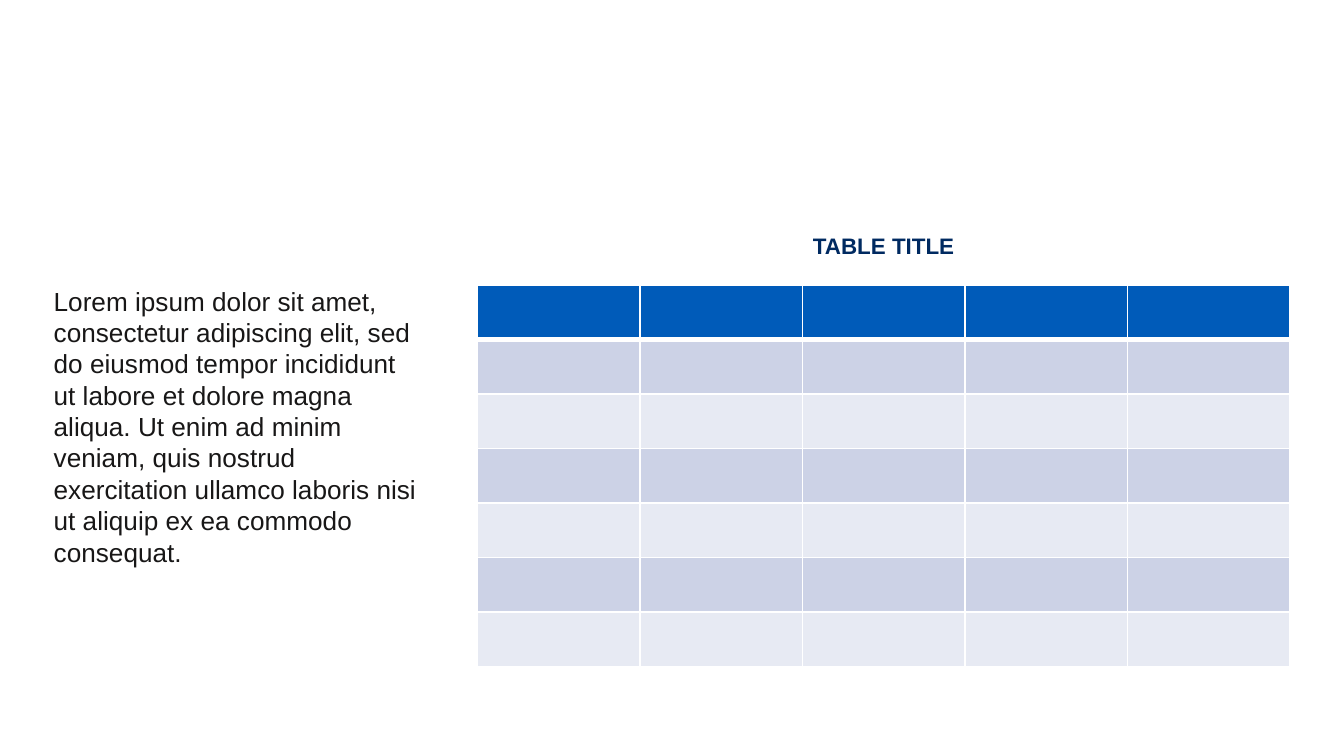
"""Build a slide with a paragraph beside a titled, empty table."""
from lxml import etree
from pptx import Presentation
from pptx.dml.color import RGBColor
from pptx.enum.text import PP_ALIGN
from pptx.oxml.ns import qn
from pptx.util import Inches, Pt

LEFT = PP_ALIGN.LEFT
CENTER = PP_ALIGN.CENTER

WHITE = "FFFFFF"
HEADER_BLUE = "005BB9"
TITLE_BLUE = "002A61"
BODY_BLACK = "181717"
BANDS = ("CCD2E6", "E7EAF3")

SLIDE_WIDTH = 10
SLIDE_HEIGHT = SLIDE_WIDTH * 9 / 16
TABLE_LEFT, TABLE_TOP = 3.55, 2.12
TABLE_WIDTH, TABLE_HEIGHT = 6.05, 2.84
ROWS, COLUMNS = 7, 5

BODY = (
    "Lorem ipsum dolor sit amet, consectetur adipiscing elit, sed do eiusmod "
    "tempor incididunt ut labore et dolore magna aliqua. Ut enim ad minim "
    "veniam, quis nostrud exercitation ullamco laboris nisi ut aliquip ex ea "
    "commodo consequat."
)


def color(value):
    return RGBColor.from_string(value)


class SlideBuilder:
    def __init__(self, slide, font_name="Arial"):
        self.slide = slide
        self.font_name = font_name

    def background(self, fill):
        background_fill = self.slide.background.fill
        background_fill.solid()
        background_fill.fore_color.rgb = color(fill)

    def text(self, box, text, size, text_color, bold=False, align=LEFT, line_spacing=None):
        shape = self.slide.shapes.add_textbox(*(Inches(length) for length in box))
        frame = shape.text_frame
        frame.word_wrap = True
        frame.margin_left = frame.margin_right = 0
        frame.margin_top = frame.margin_bottom = 0
        paragraph = frame.paragraphs[0]
        paragraph.text = text
        paragraph.alignment = align
        paragraph.line_spacing = line_spacing
        font = paragraph.font
        font.name = self.font_name
        font.size = Pt(size)
        font.bold = bold
        font.color.rgb = color(text_color)

    def border(self, cell, side, width):
        properties = cell._tc.get_or_add_tcPr()
        line = etree.SubElement(properties, qn(f"a:ln{side}"), w=str(Pt(width)))
        fill = etree.SubElement(line, qn("a:solidFill"))
        etree.SubElement(fill, qn("a:srgbClr"), val=WHITE)

    def table(self, box, rows, columns):
        left, top, width, height = (Inches(length) for length in box)
        table = self.slide.shapes.add_table(rows, columns, left, top, width, height).table
        for row in range(rows):
            for column in range(columns):
                cell = table.cell(row, column)
                widths = {"L": 1, "R": 1, "T": 3 if row == 1 else 1, "B": 3 if row == 0 else 1}
                for side, line_width in widths.items():
                    self.border(cell, side, line_width)
                cell.fill.solid()
                fill = HEADER_BLUE if row == 0 else BANDS[(row - 1) % 2]
                cell.fill.fore_color.rgb = color(fill)


def main():
    presentation = Presentation()
    presentation.slide_width = Inches(SLIDE_WIDTH)
    presentation.slide_height = Inches(SLIDE_HEIGHT)
    slide = presentation.slides.add_slide(presentation.slide_layouts[6])
    builder = SlideBuilder(slide)
    builder.background(WHITE)
    builder.table((TABLE_LEFT, TABLE_TOP, TABLE_WIDTH, TABLE_HEIGHT), ROWS, COLUMNS)
    builder.text((TABLE_LEFT, 1.73, TABLE_WIDTH, 0.27), "TABLE TITLE", 12, TITLE_BLUE,
                 bold=True, align=CENTER)
    builder.text((0.4, TABLE_TOP, 2.74, 3.06), BODY, 14, BODY_BLACK, line_spacing=Pt(16.8))
    presentation.save("out.pptx")


if __name__ == "__main__":
    main()
